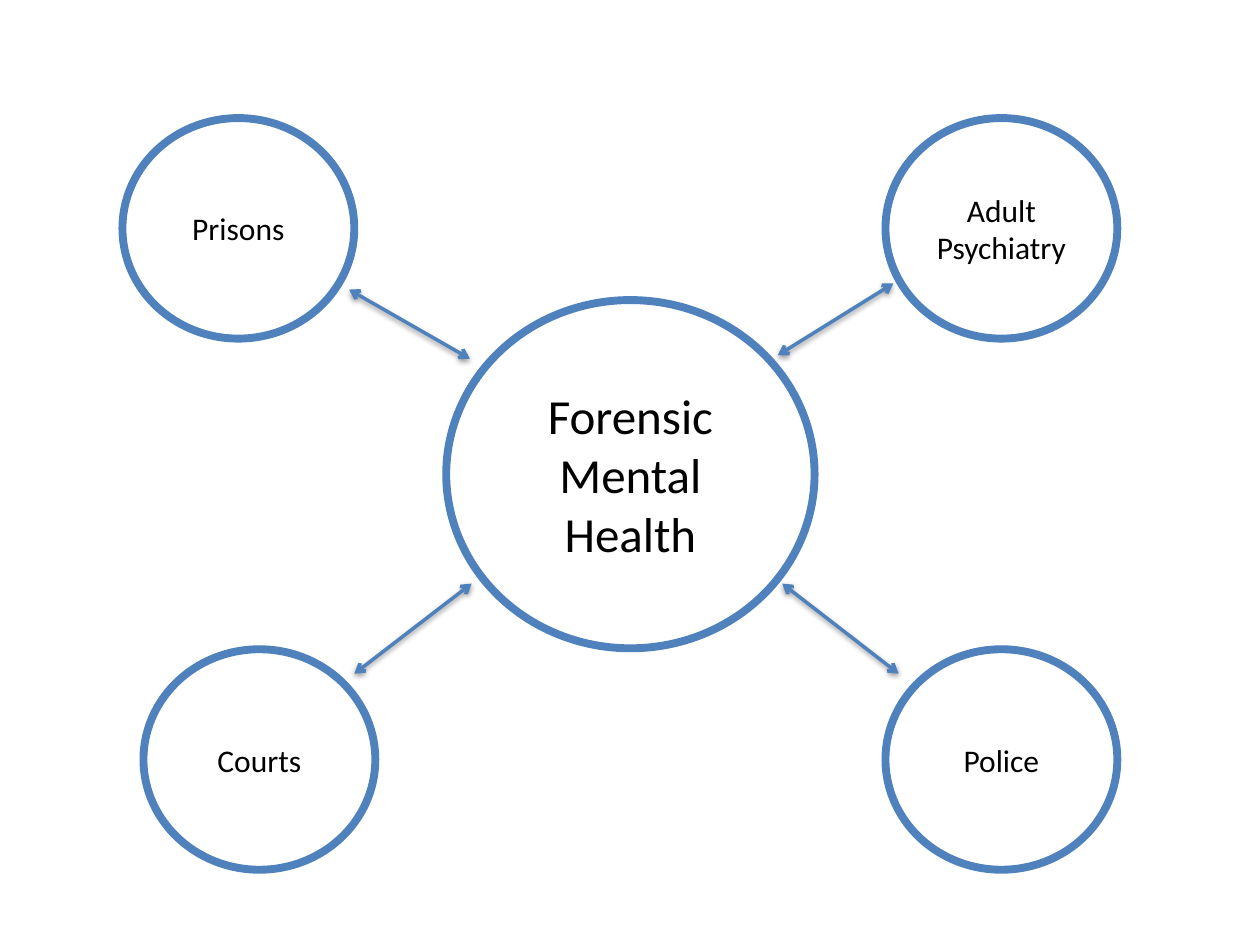
"""Build a slide linking forensic mental health to its four partner services."""
from typing import NamedTuple

from lxml import etree
from pptx import Presentation
from pptx import util as u
from pptx.dml.color import RGBColor
from pptx.enum import shapes, text
from pptx.oxml import ns

BLUE, WHITE, BLACK = "4F81BD", "FFFFFF", "000000"
PARTNER_SIZE = (132.5, 126)
LEFT, RIGHT, TOP, BOTTOM = 70, 506, 67.5, 371


class Service(NamedTuple):
    label: str
    left: float
    top: float
    size: tuple[float, float] = PARTNER_SIZE
    font_size: float = 18


class Link(NamedTuple):
    start: tuple[float, float]
    end: tuple[float, float]


SERVICES = [
    Service("Forensic Mental Health", 255, 171.5, (210.5, 199), 28),
    Service("Adult Psychiatry", RIGHT, TOP),
    Service("Prisons", LEFT, TOP),
    Service("Courts", 82, BOTTOM),
    Service("Police", RIGHT, BOTTOM),
]
LINKS = [
    Link((199.5, 165.5), (268.5, 205)),
    Link((444.5, 203), (510.5, 162)),
    Link((202.5, 385), (269.5, 333.5)),
    Link((513.5, 385), (447, 333.5)),
]


def rgb(color: str) -> RGBColor:
    return RGBColor.from_string(color)


def draw_service(slide, service: Service) -> None:
    box = map(u.Pt, (service.left, service.top, *service.size))
    circle = slide.shapes.add_shape(shapes.MSO_SHAPE.OVAL, *box)
    circle.shadow.inherit = False
    circle.fill.solid()
    circle.fill.fore_color.rgb = rgb(WHITE)
    circle.line.color.rgb = rgb(BLUE)
    circle.line.width = u.Pt(4.5)
    frame = circle.text_frame
    frame.word_wrap = True
    frame.vertical_anchor = text.MSO_ANCHOR.MIDDLE
    label = frame.paragraphs[0]
    label.text = service.label
    label.alignment = text.PP_ALIGN.CENTER
    label.font.name = "Calibri"
    label.font.size = u.Pt(service.font_size)
    label.font.color.rgb = rgb(BLACK)


def draw_link(slide, link: Link) -> None:
    ends = map(u.Pt, (*link.start, *link.end))
    arrow = slide.shapes.add_connector(shapes.MSO_CONNECTOR.STRAIGHT, *ends)
    arrow.line.color.rgb = rgb(BLUE)
    arrow.line.width = u.Pt(2)
    outline = arrow.line._get_or_add_ln()
    for tag in ("a:headEnd", "a:tailEnd"):
        etree.SubElement(outline, ns.qn(tag), type="arrow")


def main() -> None:
    deck = Presentation()
    deck.slide_width, deck.slide_height = u.Pt(720), u.Pt(540)
    slide = deck.slides.add_slide(deck.slide_layouts[6])
    for service in SERVICES:
        draw_service(slide, service)
    for link in LINKS:
        draw_link(slide, link)
    deck.save("out.pptx")


if __name__ == "__main__":
    main()
